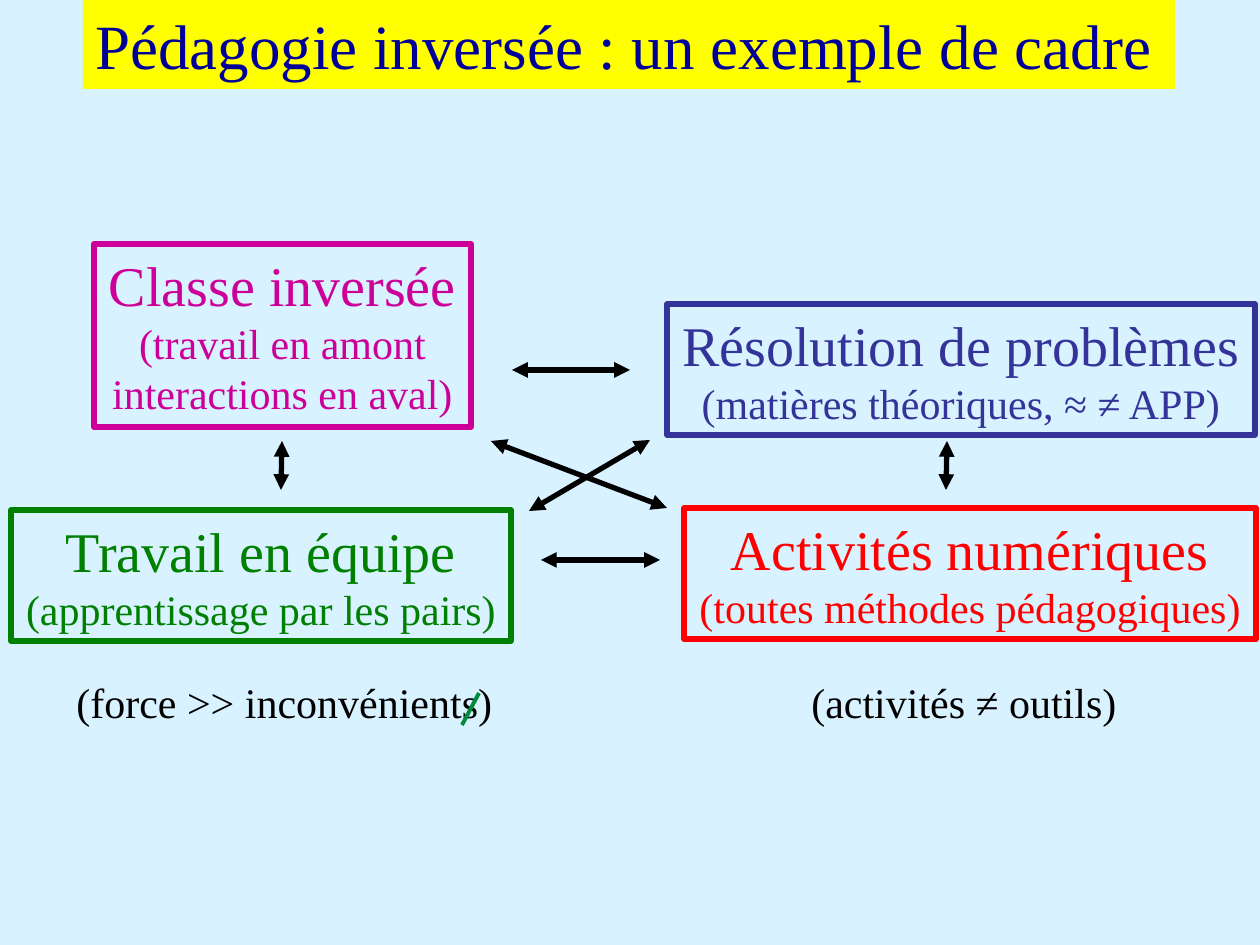
from dataclasses import dataclass

from lxml.etree import SubElement
from pptx import Presentation
from pptx.dml.color import RGBColor
from pptx.enum.shapes import MSO_CONNECTOR, MSO_SHAPE
from pptx.enum.text import MSO_ANCHOR, MSO_AUTO_SIZE, PP_ALIGN
from pptx.oxml.ns import qn
from pptx.util import Emu, Pt


@dataclass(frozen=True)
class Theme:
    font: str = "Times New Roman"
    background: str = "D9F2FF"
    banner: str = "FFFF00"
    title: str = "000099"
    ink: str = "000000"
    slash: str = "008A3E"
    title_size: int = 36
    heading_size: int = 32
    body_size: int = 24
    line_width: float = 3
    slash_width: float = 2.25


THEME = Theme()
SCALE = 914400 / 126  # EMU per px

# Content: positions are left, top, width, height in px
TITLE = ("Pédagogie inversée : un exemple de cadre", (83, 0, 1092, 89))
CONCEPTS = [
    ("Classe inversée", ["(travail en amont", "interactions en aval)"],
     "CC0099", (94, 244, 377, 183)),
    ("Travail en équipe", ["(apprentissage par les pairs)"],
     "008000", (11, 510, 500, 131)),
    ("Résolution de problèmes", ["(matières théoriques, ≈ ≠ APP)"],
     "333399", (667, 304, 588, 131)),
    ("Activités numériques", ["(toutes méthodes pédagogiques)"],
     "FF0000", (684, 508, 572, 131)),
]
NOTES = [
    ("(activités ≠ outils)", (799, 670, 333, 63)),
    ("(force >> inconvénients)", (64, 670, 445, 63)),
]
# Start x, start y, end x, end y in px
ARROWS = [
    (512, 370, 630, 370),
    (541, 560, 660, 560),
    (282, 441, 281, 490),
    (947, 441, 946, 490),
    (491, 441, 667, 508),
    (650, 440, 529, 511),
]
SLASH = (479, 693, 462, 725)


def px(*values):
    return [Emu(round(value * SCALE)) for value in values]


def add_box(slide, place, fill=None, border=None):
    box = slide.shapes.add_shape(MSO_SHAPE.RECTANGLE, *px(*place))
    box.shadow.inherit = False
    if fill:
        box.fill.solid()
        box.fill.fore_color.rgb = RGBColor.from_string(fill)
    else:
        box.fill.background()
    if border:
        box.line.color.rgb = RGBColor.from_string(border)
        box.line.width = Pt(THEME.line_width)
    else:
        box.line.fill.background()
    return box


def write(box, lines, color, align=PP_ALIGN.LEFT):
    """Fill a box with (text, size) lines, one paragraph each."""
    frame = box.text_frame
    frame.word_wrap = False
    frame.auto_size = MSO_AUTO_SIZE.SHAPE_TO_FIT_TEXT
    frame.vertical_anchor = MSO_ANCHOR.TOP
    for index, (text, size) in enumerate(lines):
        para = frame.add_paragraph() if index else frame.paragraphs[0]
        para.alignment = align
        span = para.add_run()
        span.text = text
        span.font.name = THEME.font
        span.font.size = Pt(size)
        span.font.color.rgb = RGBColor.from_string(color)


def add_line(slide, ends, color, width, arrowheads=False):
    connector = slide.shapes.add_connector(MSO_CONNECTOR.STRAIGHT, *px(*ends))
    connector.line.color.rgb = RGBColor.from_string(color)
    connector.line.width = Pt(width)
    if arrowheads:
        for tag in ("a:headEnd", "a:tailEnd"):
            SubElement(connector.line._get_or_add_ln(), qn(tag), type="triangle")
    SubElement(connector._element.spPr, qn("a:effectLst"))


def main():
    deck = Presentation()
    deck.slide_width, deck.slide_height = px(1260, 945)
    slide = deck.slides.add_slide(deck.slide_layouts[6])
    slide.background.fill.solid()
    slide.background.fill.fore_color.rgb = RGBColor.from_string(THEME.background)

    # Title banner
    text, place = TITLE
    write(add_box(slide, place, fill=THEME.banner),
          [(text, THEME.title_size)], THEME.title)

    # Four concepts
    for heading, details, color, place in CONCEPTS:
        lines = [(heading, THEME.heading_size)]
        lines += [(detail, THEME.body_size) for detail in details]
        write(add_box(slide, place, border=color), lines, color, PP_ALIGN.CENTER)

    # Links between the concepts
    for ends in ARROWS:
        add_line(slide, ends, THEME.ink, THEME.line_width, arrowheads=True)

    # Remarks, with the plural struck out
    for text, place in NOTES:
        write(slide.shapes.add_textbox(*px(*place)),
              [(text, THEME.body_size)], THEME.ink)
    add_line(slide, SLASH, THEME.slash, THEME.slash_width)

    deck.save("out.pptx")


if __name__ == "__main__":
    main()
